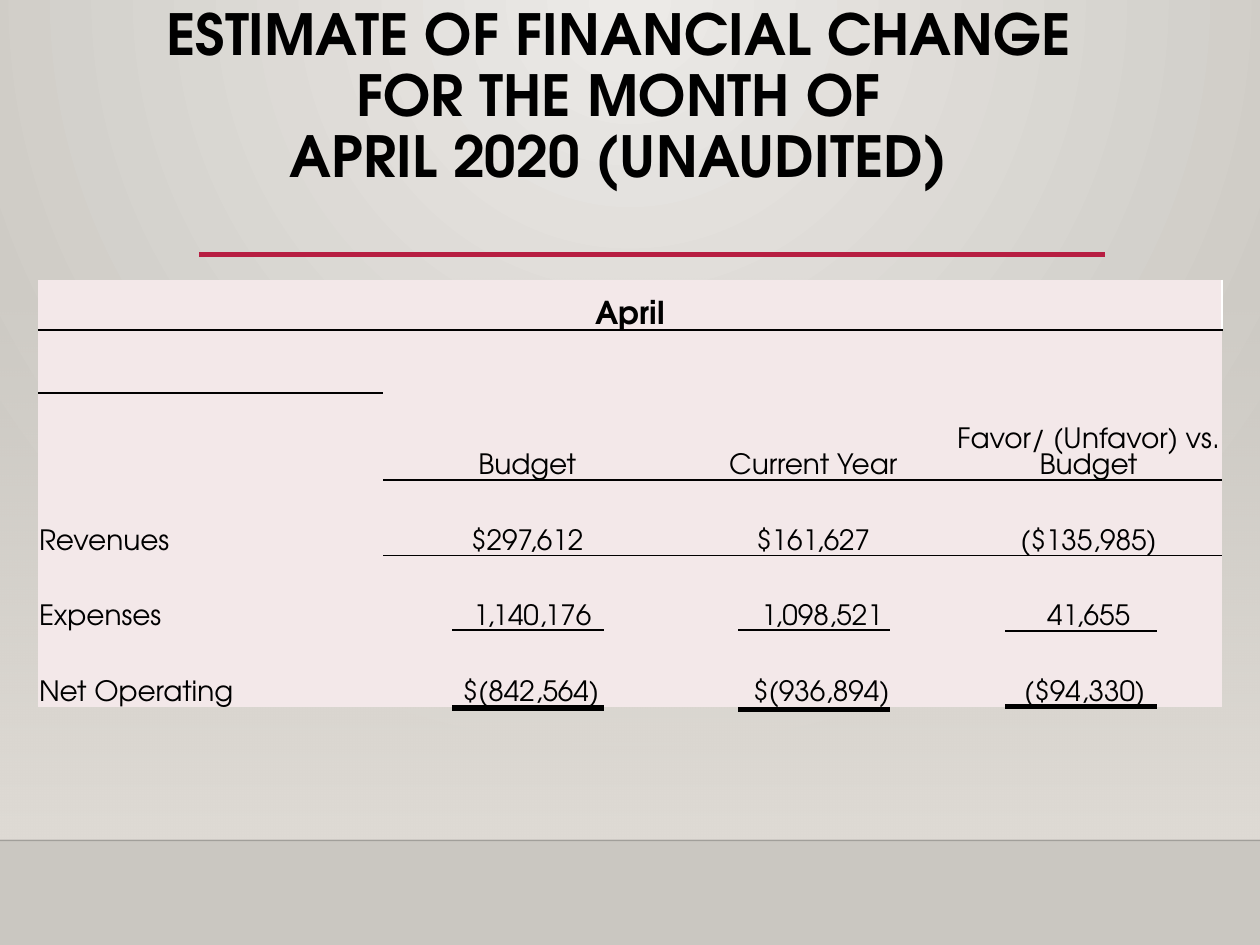
from lxml.etree import SubElement
from pptx import Presentation
from pptx.dml.color import RGBColor
from pptx.enum.shapes import MSO_CONNECTOR, MSO_SHAPE
from pptx.enum.text import MSO_ANCHOR as Anchor, PP_ALIGN as Align
from pptx.oxml import parse_xml
from pptx.oxml.ns import nsdecls, qn
from pptx.util import Inches, Pt

FONT = "TeX Gyre Adventor"
BLACK, WHITE, CRIMSON, BLUSH = "000000", "FFFFFF", "B71E42", "F3E8E9"
NO_STYLE = "{2D5ABB26-0587-4C30-8999-92F81FD0307C}"
COLUMN_WIDTHS = [2.74, 2.29, 2.25, 2.12]
ROW_HEIGHTS = [0.4, 0.5, 0.34, 0.35, 0.6, 0.6, 0.6]
HEADINGS = ["Budget", "Current Year", "Favor/ (Unfavor) vs. Budget"]
FIGURES = [
    ("Revenues", ["$297,612", "$161,627", "($135,985)"], [0, 0, 0]),
    ("Expenses", ["1,140,176", "1,098,521", "41,655"], [0.08, 0.14, 0]),
    ("Net Operating", ["$(842,564)", "$(936,894)", "($94,330)"], [0.06, 0.13, -0.06]),
]
TOTAL_RULES = [(3.59, 5, 5.62), (5.86, 5, 5.63), (7.98, 5.01, 5.61)]


def rgb(color):
    return RGBColor.from_string(color)


def set_gradient(owner, stops, direction):
    stop_xml = "".join(
        f'<a:gs pos="{pos}"><a:srgbClr val="{color}"><a:alpha val="{alpha}"/></a:srgbClr></a:gs>'
        for pos, color, alpha in stops)
    gradient = parse_xml(
        f'<a:gradFill {nsdecls("a")} rotWithShape="1"><a:gsLst>{stop_xml}</a:gsLst>{direction}</a:gradFill>')
    solid = owner.find(qn("a:solidFill"))
    owner.replace(solid, gradient)


def paint_background(slide):
    slide.background.fill.solid()
    set_gradient(
        slide.element.xpath(".//p:bgPr")[0],
        [(0, "ECEAE7", 100000), (100000, "CAC7C1", 100000)],
        '<a:path path="circle"><a:fillToRect l="43000" t="0" r="43000" b="100000"/></a:path>')


def add_wall(slide):
    wall = slide.shapes.add_shape(MSO_SHAPE.RECTANGLE, 0, Inches(2.2), Inches(10), Inches(4.46))
    wall.shadow.inherit = False
    wall.line.fill.background()
    wall.fill.solid()
    set_gradient(
        wall.element.spPr,
        [(0, "DFDBD5", 0), (100000, "DFDBD5", 100000)],
        '<a:lin ang="5400000" scaled="0"/>')


def add_rule(slide, left, right, y, color, width, opacity=100):
    rule = slide.shapes.add_connector(
        MSO_CONNECTOR.STRAIGHT, Inches(left), Inches(y), Inches(right), Inches(y))
    rule.line.color.rgb = rgb(color)
    rule.line.width = Pt(width)
    if opacity < 100:
        tint = rule.element.spPr.find(".//" + qn("a:srgbClr"))
        SubElement(tint, qn("a:alpha")).set("val", str(opacity * 1000))
    SubElement(rule.element.spPr, qn("a:effectLst"))


def style_text(paragraph, size, align, bold=False):
    paragraph.alignment = align
    paragraph.font.name = FONT
    paragraph.font.size = Pt(size)
    paragraph.font.bold = bold
    paragraph.font.color.rgb = rgb(BLACK)


def add_title(slide):
    box = slide.shapes.add_textbox(Inches(0.81), 0, Inches(8.2), Inches(1.56))
    box.text_frame.word_wrap = True
    title = box.text_frame.paragraphs[0]
    title.text = "ESTIMATE OF FINANCIAL CHANGE FOR THE MONTH OF\vAPRIL 2020 (UNAUDITED)"
    title.line_spacing = 0.9
    style_text(title, 32.4, Align.CENTER, bold=True)


def fill_cell(cell, text, size=16, align=Align.CENTER, bold=False, shift=0):
    cell.text = text
    cell.margin_left = Inches(0.01 + max(shift, 0))
    cell.margin_right = Inches(0.01 + max(-shift, 0))
    style_text(cell.text_frame.paragraphs[0], size, align, bold)


def set_border(cell, side, color):
    border = parse_xml(
        f'<a:ln{side} {nsdecls("a")} w="12700"><a:solidFill><a:srgbClr val="{color}"/>'
        f'</a:solidFill></a:ln{side}>')
    properties = cell._tc.get_or_add_tcPr()
    properties.insert(len(properties) - 1, border)


def add_statement(slide):
    table = slide.shapes.add_table(
        len(ROW_HEIGHTS), len(COLUMN_WIDTHS), Inches(0.3), Inches(2.22),
        Inches(sum(COLUMN_WIDTHS)), Inches(sum(ROW_HEIGHTS))).table
    table.first_row = table.horz_banding = False
    table._tbl.tblPr.find(qn("a:tableStyleId")).text = NO_STYLE
    for column, width in zip(table.columns, COLUMN_WIDTHS):
        column.width = Inches(width)
    for row, height in zip(table.rows, ROW_HEIGHTS):
        row.height = Inches(height)
    for cell in table.iter_cells():
        cell.fill.solid()
        cell.fill.fore_color.rgb = rgb(BLUSH)
        cell.vertical_anchor = Anchor.BOTTOM
        cell.margin_left = cell.margin_right = cell.margin_top = Inches(0.01)
        cell.margin_bottom = 0

    month = table.cell(0, 0)
    month.merge(table.cell(0, 3))
    fill_cell(month, "April", size=18, bold=True)
    set_border(month, "R", WHITE)
    for col in range(4):
        set_border(table.cell(0, col), "B", BLACK)
        set_border(table.cell(1, col), "T", BLACK)

    for col, heading in enumerate(HEADINGS, 1):
        top = table.cell(1, col)
        top.merge(table.cell(3, col))
        fill_cell(top, heading)
        set_border(top, "B", BLACK)
        set_border(table.cell(4, col), "T", BLACK)

    for row, (label, amounts, shifts) in enumerate(FIGURES, 4):
        fill_cell(table.cell(row, 0), label, align=Align.LEFT)
        for col, (amount, shift) in enumerate(zip(amounts, shifts), 1):
            fill_cell(table.cell(row, col), amount, shift=shift)


def main():
    deck = Presentation()
    deck.slide_width, deck.slide_height = Inches(10), Inches(7.5)
    slide = deck.slides.add_slide(deck.slide_layouts[6])
    paint_background(slide)
    add_wall(slide)
    add_rule(slide, 0, 10, 6.67, "000001", 1, opacity=20)
    add_rule(slide, 1.58, 8.77, 2.02, CRIMSON, 2.5)
    add_title(slide)
    add_statement(slide)
    for left, subtotal_y, total_y in TOTAL_RULES:
        add_rule(slide, left, left + 1.2, total_y, BLACK, 3)
        add_rule(slide, left, left + 1.2, subtotal_y, BLACK, 1.25)
    deck.save("out.pptx")


if __name__ == "__main__":
    main()
